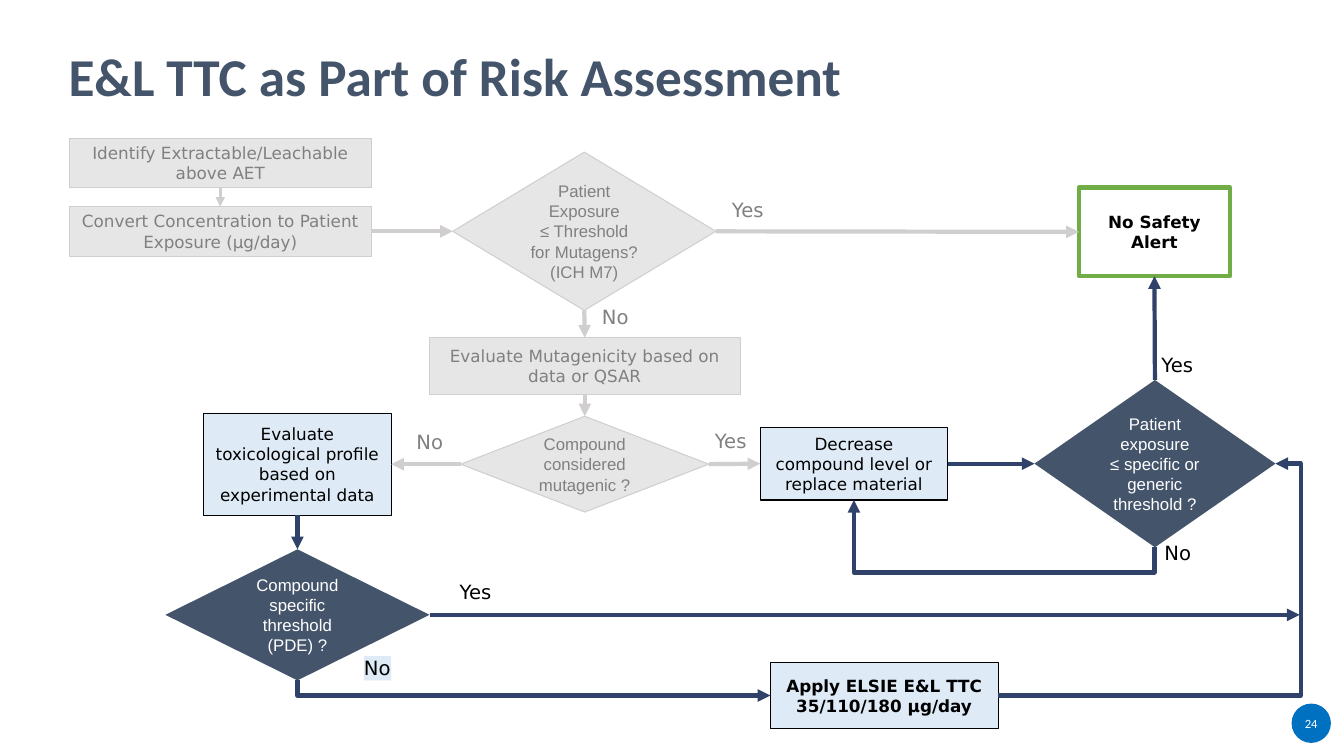
from lxml import etree
from pptx import Presentation
from pptx.dml.color import RGBColor
from pptx.enum.shapes import MSO_CONNECTOR, MSO_SHAPE
from pptx.enum.text import MSO_ANCHOR, MSO_AUTO_SIZE, PP_ALIGN
from pptx.oxml.ns import qn
from pptx.util import Pt

PX = 9144  # EMU per px, 100 px to the inch
PROCESS = MSO_SHAPE.FLOWCHART_PROCESS
DECISION = MSO_SHAPE.FLOWCHART_DECISION
OVAL = MSO_SHAPE.OVAL
STRAIGHT, ELBOW = MSO_CONNECTOR.STRAIGHT, MSO_CONNECTOR.ELBOW
TOP, MIDDLE = MSO_ANCHOR.TOP, MSO_ANCHOR.MIDDLE
LEFT, CENTER = PP_ALIGN.LEFT, PP_ALIGN.CENTER
NO_FIT = MSO_AUTO_SIZE.NONE
N, W, S, E = range(4)  # connection sites

COLORS = {
    "slate": "44546A", "navy": "304269", "pale": "DEEBF7", "green": "70AD47",
    "mist": "E7E6E6", "silver": "D0CECE", "gray": "808080",
    "badge": "0070C0", "black": "000000", "white": "FFFFFF",
}
# style: fill, line, line width, text colour, bold
STYLES = {
    "faded": ("mist", "silver", 0.75, "gray", False),
    "action": ("pale", "black", 0.75, "black", False),
    "result": ("pale", "black", 0.75, "black", True),
    "safe": ("white", "green", 3, "black", True),
    "question": ("slate", None, 0, "white", False),
    "badge": ("badge", None, 0, "white", False),
}
# name: shape, style, box, text
NODES = {
    "identify": (PROCESS, "faded", (69, 137, 299, 49),
                 "Identify Extractable/Leachable above AET"),
    "convert": (PROCESS, "faded", (69, 205, 299, 49),
                "Convert Concentration to Patient Exposure (µg/day)"),
    "mutagen_limit": (DECISION, "faded", (449, 151, 261, 157),
                      "Patient Exposure\n≤ Threshold for Mutagens? (ICH M7)"),
    "mutagenicity": (PROCESS, "faded", (426, 335, 308, 56),
                     "Evaluate Mutagenicity based on data or QSAR"),
    "mutagenic": (DECISION, "faded", (457, 413, 246, 95),
                  "Compound considered mutagenic ?"),
    "profile": (PROCESS, "action", (202, 410, 186, 101),
                "Evaluate toxicological profile based on experimental data"),
    "pde": (DECISION, "question", (164, 545, 262, 130),
            "Compound specific threshold (PDE) ?"),
    "ttc": (PROCESS, "result", (764, 657, 226, 66),
            "Apply ELSIE E&L TTC\n35/110/180 µg/day"),
    "decrease": (PROCESS, "action", (754, 424, 186, 72),
                 "Decrease compound level or replace material"),
    "exposure": (DECISION, "question", (1026, 377, 239, 166),
                 "Patient exposure\n≤ specific or generic threshold ?"),
    "no_alert": (PROCESS, "safe", (1070, 186, 150, 88), "No Safety Alert"),
}
# from, site, to, site, colour, width
ARROWS = [
    ("identify", S, "convert", N, "silver", 2.25),
    ("convert", E, "mutagen_limit", W, "silver", 3),
    ("mutagen_limit", E, "no_alert", W, "silver", 3),
    ("mutagen_limit", S, "mutagenicity", N, "silver", 3),
    ("mutagenicity", S, "mutagenic", N, "silver", 3),
    ("mutagenic", E, "decrease", W, "silver", 3),
    ("mutagenic", W, "profile", E, "silver", 3),
    ("profile", S, "pde", N, "navy", 3),
    ("decrease", E, "exposure", W, "navy", 3),
    ("exposure", N, "no_alert", S, "navy", 3),
]
# text, left, top, colour, fill
LABELS = [
    ("Yes", 726, 196, "gray", None),
    ("No", 597, 303, "gray", None),
    ("Yes", 709, 426, "gray", None),
    ("No", 413, 427, "gray", None),
    ("Yes", 456, 575, "black", None),
    ("No", 361, 651, "black", "pale"),
    ("Yes", 1152, 350, "black", None),
    ("No", 1155, 537, "black", None),
]


def px(*values):
    return [round(v * PX) for v in values]


def rgb(name):
    return RGBColor.from_string(COLORS[name])


def write(tf, text, size, font, color, bold=False, align=CENTER):
    p = tf.paragraphs[0]
    p.alignment = align
    for i, line in enumerate(text.split("\n")):
        if i:
            p.add_line_break()
        r = p.add_run()
        r.text = line
        r.font.size, r.font.name, r.font.bold = Pt(size), font, bold
        r.font.color.rgb = rgb(color)
    return p


def set_margins(tf, left, top, right, bottom):
    tf.margin_left, tf.margin_top, tf.margin_right, tf.margin_bottom = px(
        left, top, right, bottom)


def add_title(s, text):
    sp = s.shapes.title
    sp.left, sp.top, sp.width, sp.height = px(68, 45, 1131, 71)
    tf = sp.text_frame
    tf.auto_size, tf.vertical_anchor = NO_FIT, TOP
    set_margins(tf, 0, 5, 10, 5)
    write(tf, text, 38, "Calibri", "slate", True, LEFT).line_spacing = 0.9


def add_node(s, kind, style, box, text, size=12, font=None):
    fill, line, width, color, bold = STYLES[style]
    sp = s.shapes.add_shape(kind, *px(*box))
    sp.shadow.inherit = False
    sp.fill.solid()
    sp.fill.fore_color.rgb = rgb(fill)
    if line:
        sp.line.color.rgb = rgb(line)
        sp.line.width = Pt(width)
    else:
        sp.line.fill.background()
    tf = sp.text_frame
    tf.word_wrap, tf.vertical_anchor = True, MIDDLE
    font = font or ("Arial" if kind == DECISION else "DejaVu Sans")
    write(tf, text, size, font, color, bold)
    return sp


def add_label(s, text, left, top, color, fill):
    sp = s.shapes.add_textbox(*px(left, top, 33 if text == "Yes" else 27, 24))
    if fill:
        sp.fill.solid()
        sp.fill.fore_color.rgb = rgb(fill)
    tf = sp.text_frame
    tf.word_wrap = False
    set_margins(tf, 0, 0, 0, 0)
    write(tf, text, 14, "DejaVu Sans", color, align=LEFT)


def add_arrow(s, start, end, color="navy", width=3, kind=STRAIGHT):
    c = s.shapes.add_connector(kind, *px(*start, *end))
    c.line.color.rgb = rgb(color)
    c.line.width = Pt(width)
    etree.SubElement(c.line._get_or_add_ln(), qn("a:tailEnd"), type="triangle")
    etree.SubElement(c._element.spPr, qn("a:effectLst"))
    return c


def add_elbow(s, start, end, turns=0, preset="bentConnector3", bend=None):
    """Bent arrow rotated by quarter turns; bend is the middle leg's place in 1/100000."""
    cx, cy = (start[0] + end[0]) / 2, (start[1] + end[1]) / 2
    dx, dy = start[0] - cx, start[1] - cy
    for _ in range(turns):
        dx, dy = dy, -dx
    c = add_arrow(s, (cx + dx, cy + dy), (cx - dx, cy - dy), kind=ELBOW)
    spPr = c._element.spPr
    if turns:
        spPr.find(qn("a:xfrm")).set("rot", str(turns * 5400000))
    geom = spPr.find(qn("a:prstGeom"))
    geom.set("prst", preset)
    if bend is not None:
        guides = geom.find(qn("a:avLst"))
        etree.SubElement(guides, qn("a:gd"), name="adj1", fmla=f"val {bend}")


def main():
    prs = Presentation()
    prs.slide_width, prs.slide_height = px(1333, 750)
    s = prs.slides.add_slide(prs.slide_layouts[5])
    add_title(s, "E&L TTC as Part of Risk Assessment")
    nodes = {name: add_node(s, *node) for name, node in NODES.items()}
    for source, out, target, into, color, width in ARROWS:
        c = add_arrow(s, (0, 0), (0, 0), color, width)
        c.begin_connect(nodes[source], out)
        c.end_connect(nodes[target], into)
    c = add_arrow(s, (426, 610), (1289, 610))
    c.begin_connect(nodes["pde"], E)
    add_elbow(s, (295, 675), (764, 690), 3, "bentConnector2")
    add_elbow(s, (990, 690), (1265, 460), bend=109100)
    add_elbow(s, (1145, 543), (847, 496), 1, bend=-53100)
    for label in LABELS:
        add_label(s, *label)
    badge = add_node(s, OVAL, "badge", (1281, 698, 39, 39), "24", 9, "Calibri")
    set_margins(badge.text_frame, 0, 0, 0, 0)
    prs.save("out.pptx")


if __name__ == "__main__":
    main()
